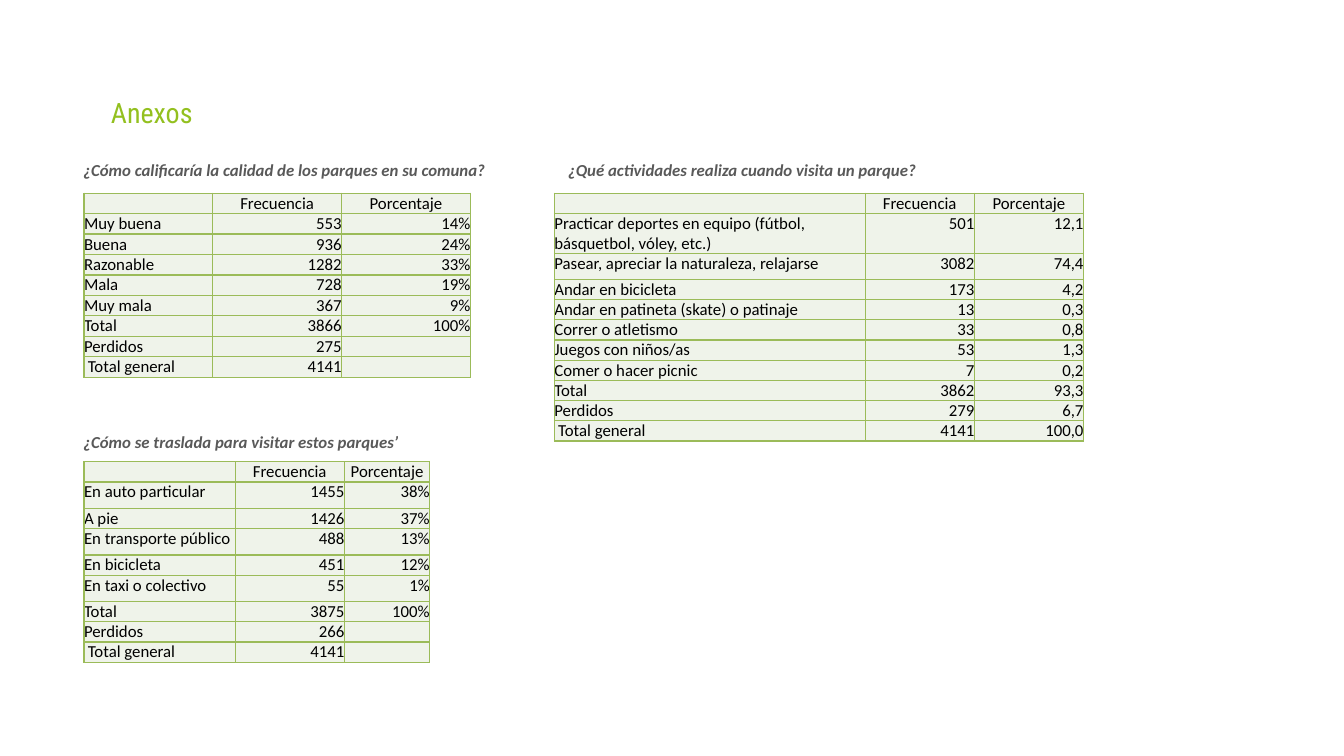
import pptx
import pptx.util
import pptx.dml.color
import pptx.enum.text
import lxml.etree

Pt = pptx.util.Pt
ALIGN = pptx.enum.text.PP_ALIGN
ANCHOR = pptx.enum.text.MSO_ANCHOR

THEME = {
    "title": {"font": "Roboto Condensed", "size": 20, "color": "93C01F"},
    "head": {"font": "Calibri", "size": 12, "color": "595959", "bold": True, "italic": True},
    "cell": {"font": "Calibri", "size": 12, "color": "000000"},
    "fill": "EFF3EA",
    "line": "9BBB59",
}

TITLE = "Anexos"
LABELS = ("", "Frecuencia", "Porcentaje")
TABLES = [
    {
        "head": "¿Cómo calificaría la calidad de los parques en su comuna?",
        "head_at": (52.5, 110.2), "at": (60, 138), "cols": (92, 92, 92),
        "row": 14.6, "tall": {},
        "data": [
            ("Muy buena", "553", "14%"),
            ("Buena", "936", "24%"),
            ("Razonable", "1282", "33%"),
            ("Mala", "728", "19%"),
            ("Muy mala", "367", "9%"),
            ("Total", "3866", "100%"),
            ("Perdidos", "275", ""),
            (" Total general", "4141", ""),
        ],
    },
    {
        "head": " ¿Qué actividades realiza cuando visita un parque?",
        "head_at": (396, 110.2), "at": (396, 138), "cols": (222, 78, 78),
        "row": 14.4, "tall": {1: 28.8, 2: 18.3},
        "data": [
            ("Practicar deportes en equipo (fútbol, básquetbol, vóley, etc.)", "501", "12,1"),
            ("Pasear, apreciar la naturaleza, relajarse", "3082", "74,4"),
            ("Andar en bicicleta", "173", "4,2"),
            ("Andar en patineta (skate) o patinaje", "13", "0,3"),
            ("Correr o atletismo", "33", "0,8"),
            ("Juegos con niños/as", "53", "1,3"),
            ("Comer o hacer picnic", "7", "0,2"),
            ("Total", "3862", "93,3"),
            ("Perdidos", "279", "6,7"),
            (" Total general", "4141", "100,0"),
        ],
    },
    {
        "head": "¿Cómo se traslada para visitar estos parques’",
        "head_at": (52.5, 304.6), "at": (60, 329.8), "cols": (108, 78, 61),
        "row": 14.4, "tall": {1: 18.9, 3: 18.9, 5: 18.9},
        "data": [
            ("En auto particular", "1455", "38%"),
            ("A pie", "1426", "37%"),
            ("En transporte público", "488", "13%"),
            ("En bicicleta", "451", "12%"),
            ("En taxi o colectivo", "55", "1%"),
            ("Total", "3875", "100%"),
            ("Perdidos", "266", ""),
            (" Total general", "4141", ""),
        ],
    },
]


def rgb(code):
    return pptx.dml.color.RGBColor.from_string(code)


def style(para, look):
    for run in para.runs:
        font = run.font
        font.name = look["font"]
        font.size = Pt(look["size"])
        font.color.rgb = rgb(look["color"])
        font.bold = look.get("bold", False)
        font.italic = look.get("italic", False)


def add_text(slide, text, box, look, inset):
    frame = slide.shapes.add_textbox(*map(Pt, box)).text_frame
    frame.word_wrap = True
    frame.auto_size = pptx.enum.text.MSO_AUTO_SIZE.SHAPE_TO_FIT_TEXT
    if not inset:
        frame.margin_left = frame.margin_right = 0
        frame.margin_top = frame.margin_bottom = 0
    frame.text = text
    style(frame.paragraphs[0], look)


def add_edges(cell):
    props = cell._tc.get_or_add_tcPr()
    qn = pptx.oxml.ns.qn
    for side in ("lnL", "lnR", "lnT", "lnB"):
        edge = lxml.etree.SubElement(props, qn("a:" + side), w=str(Pt(1)))
        fill = lxml.etree.SubElement(edge, qn("a:solidFill"))
        lxml.etree.SubElement(fill, qn("a:srgbClr"), val=THEME["line"])


def fill_cell(cell, text, row, col):
    look = THEME["cell"]
    add_edges(cell)
    cell.fill.solid()
    cell.fill.fore_color.rgb = rgb(THEME["fill"])
    cell.margin_left = cell.margin_right = 0
    cell.margin_top = cell.margin_bottom = 0
    cell.vertical_anchor = ANCHOR.TOP if row else ANCHOR.BOTTOM
    para = cell.text_frame.paragraphs[0]
    if text:
        para.text = text
        para.alignment = ALIGN.CENTER if not row else ALIGN.RIGHT if col else ALIGN.LEFT
        style(para, look)
    else:
        lxml.etree.SubElement(para._p, pptx.oxml.ns.qn("a:endParaRPr"), sz=str(look["size"] * 100))


def add_grid(slide, part):
    rows = [LABELS] + part["data"]
    highs = [part["tall"].get(i, part["row"]) for i in range(len(rows))]
    size = (sum(part["cols"]), sum(highs))
    table = slide.shapes.add_table(len(rows), len(LABELS), *map(Pt, part["at"] + size)).table
    table.first_row = table.horz_banding = False
    for col, wide in zip(table.columns, part["cols"]):
        col.width = Pt(wide)
    for i, row in enumerate(rows):
        table.rows[i].height = Pt(highs[i])
        for j, text in enumerate(row):
            fill_cell(table.cell(i, j), text, i, j)


def main():
    deck = pptx.Presentation()
    deck.slide_width, deck.slide_height = Pt(960), Pt(540)
    slide = deck.slides.add_slide(deck.slide_layouts[6])
    add_text(slide, TITLE, (79.2, 68.4, 826, 24.5), THEME["title"], False)
    for part in TABLES:
        add_grid(slide, part)
        add_text(slide, part["head"], part["head_at"] + (307.5, 21.8), THEME["head"], True)
    deck.save("out.pptx")


if __name__ == "__main__":
    main()
